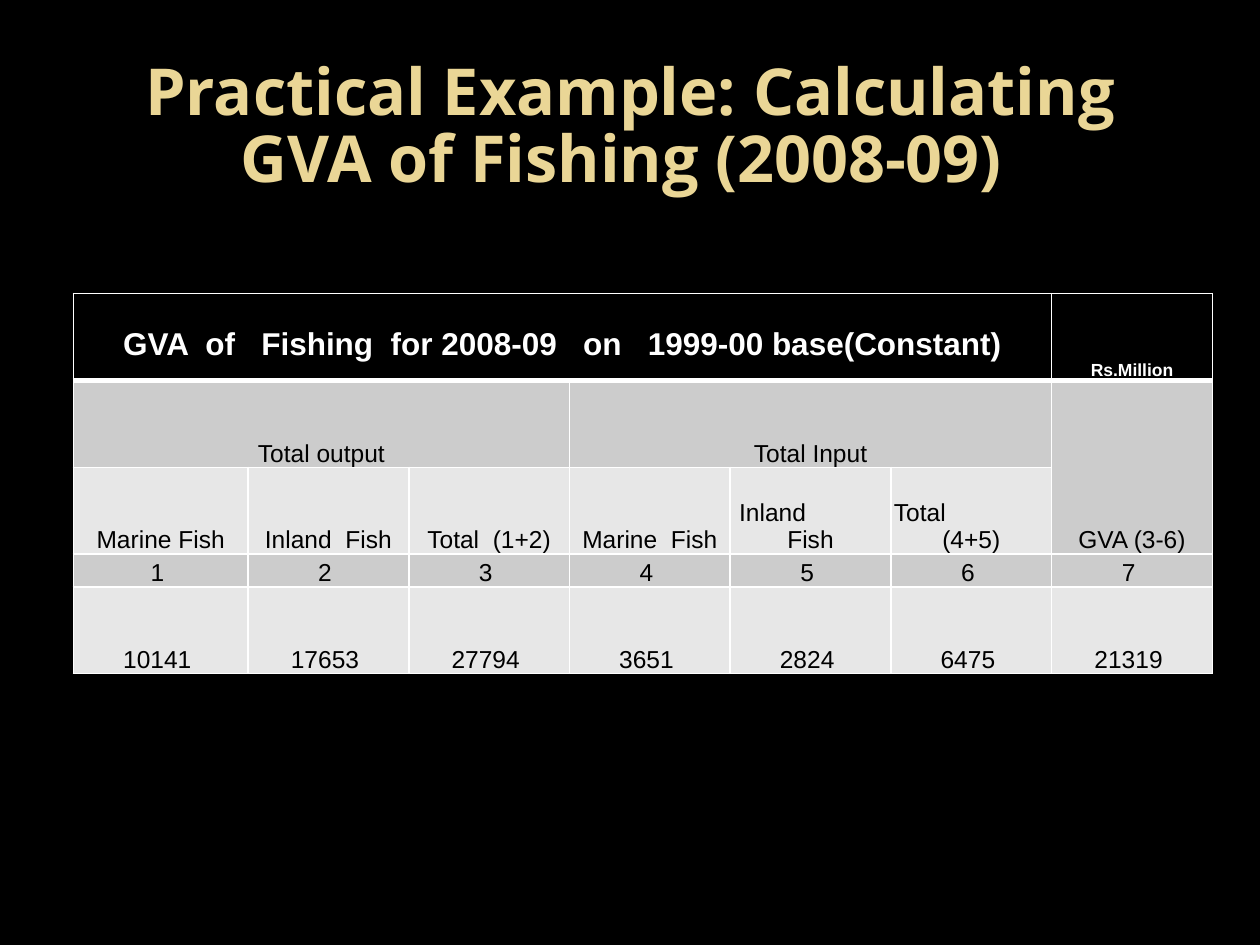
from lxml import etree
from pptx import Presentation
from pptx.dml.color import RGBColor
from pptx.enum.text import MSO_ANCHOR, PP_ALIGN
from pptx.oxml.ns import qn
from pptx.util import Cm, Pt

CENTER, LEFT = PP_ALIGN.CENTER, PP_ALIGN.LEFT
MIDDLE, BOTTOM = MSO_ANCHOR.MIDDLE, MSO_ANCHOR.BOTTOM
BLACK = RGBColor(0x00, 0x00, 0x00)
WHITE = RGBColor(0xFF, 0xFF, 0xFF)
GOLD = RGBColor(0xEA, 0xD6, 0x96)
DARK_BAND = RGBColor(0xCC, 0xCC, 0xCC)
LIGHT_BAND = RGBColor(0xE7, 0xE7, 0xE7)

ROW_FILLS = [BLACK, DARK_BAND, LIGHT_BAND, DARK_BAND, LIGHT_BAND]
ROW_HEIGHTS = [1.75, 1.75, 1.75, 0.66, 1.75]
COLUMN_WIDTHS = [3.52] + [3.24] * 6
MERGES = [(0, 0, 0, 5), (1, 0, 1, 2), (1, 3, 1, 5), (1, 6, 2, 6)]

HEADINGS = {
    (1, 0): "Total output",
    (1, 3): "Total Input",
    (1, 6): "GVA (3-6)",
    (2, 0): "Marine Fish",
    (2, 1): "Inland  Fish",
    (2, 2): "Total  (1+2)",
    (2, 3): "Marine  Fish",
}
# First word at the left with an indent in cm, second word centred below
STEPPED_HEADINGS = {
    (2, 4): ("Inland", "Fish", 0.18),
    (2, 5): ("Total", "(4+5)", 0.06),
}
VALUES = [10141, 17653, 27794, 3651, 2824, 6475, 21319]


def write_text(para, text, size=14, color=BLACK, bold=False, font="Arial",
               align=CENTER, indent=0):
    para.alignment = align
    if indent:
        para._p.get_or_add_pPr().set("marL", str(Cm(indent)))
    span = para.add_run()
    span.text = text
    span.font.name = font
    span.font.size = Pt(size)
    span.font.bold = bold
    span.font.color.rgb = color


def add_title(page, text):
    box = page.shapes.add_textbox(Cm(1.27), Cm(0.76), Cm(22.86), Cm(3.68))
    frame = box.text_frame
    frame.word_wrap = True
    frame.vertical_anchor = MIDDLE
    para = frame.paragraphs[0]
    para.line_spacing = 0.87
    write_text(para, text, size=37, color=GOLD, bold=True, font="Open Sans")


def set_borders(cell, widths):
    """Draw white cell borders; widths maps an edge tag to points."""
    properties = cell._tc.get_or_add_tcPr()
    for position, (edge, width) in enumerate(widths.items()):
        line = etree.Element(qn(f"a:{edge}"), w=str(Pt(width)))
        fill = etree.SubElement(line, qn("a:solidFill"))
        etree.SubElement(fill, qn("a:srgbClr"), val=str(WHITE))
        properties.insert(position, line)


def style_cell(cell, row):
    cell.fill.solid()
    cell.fill.fore_color.rgb = ROW_FILLS[row]
    cell.vertical_anchor = BOTTOM
    cell.margin_left = cell.margin_right = 0
    cell.margin_top = cell.margin_bottom = 0
    set_borders(cell, {"lnL": 1, "lnR": 1,
                       "lnT": 3 if row == 1 else 1,
                       "lnB": 3 if row == 0 else 1})


def add_grid(page):
    """Add the empty table with its sizes, fills, borders and merged cells."""
    frame = page.shapes.add_table(
        len(ROW_HEIGHTS), len(COLUMN_WIDTHS), Cm(1.48), Cm(5.92),
        Cm(sum(COLUMN_WIDTHS)), Cm(sum(ROW_HEIGHTS)))
    table = frame.table
    for column, width in zip(table.columns, COLUMN_WIDTHS):
        column.width = Cm(width)
    for index, height in enumerate(ROW_HEIGHTS):
        table.rows[index].height = Cm(height)
        for cell in table.rows[index].cells:
            style_cell(cell, index)
    for top, left, bottom, right in MERGES:
        table.cell(top, left).merge(table.cell(bottom, right))
    return table


def fill_table(table):
    caption = table.cell(0, 0)
    caption.margin_bottom = Cm(0.36)
    write_text(caption.text_frame.paragraphs[0],
               "GVA  of   Fishing  for 2008-09   on   1999-00 base(Constant)",
               size=18, color=WHITE, bold=True)
    write_text(table.cell(0, 6).text_frame.paragraphs[0], "Rs.Million",
               size=10, color=WHITE, bold=True)
    for place, text in HEADINGS.items():
        write_text(table.cell(*place).text_frame.paragraphs[0], text)
    for place, (first, second, indent) in STEPPED_HEADINGS.items():
        frame = table.cell(*place).text_frame
        write_text(frame.paragraphs[0], first, align=LEFT, indent=indent)
        write_text(frame.add_paragraph(), second)
    for column, value in enumerate(VALUES):
        for row, number in ((3, column + 1), (4, value)):
            write_text(table.cell(row, column).text_frame.paragraphs[0],
                       f"{number} ")


def main():
    deck = Presentation()
    deck.slide_width, deck.slide_height = Cm(25.4), Cm(19.05)
    page = deck.slides.add_slide(deck.slide_layouts[6])
    page.background.fill.solid()
    page.background.fill.fore_color.rgb = BLACK
    add_title(page, "Practical Example: Calculating GVA of Fishing (2008-09) ")
    fill_table(add_grid(page))
    deck.save("out.pptx")


if __name__ == "__main__":
    main()
